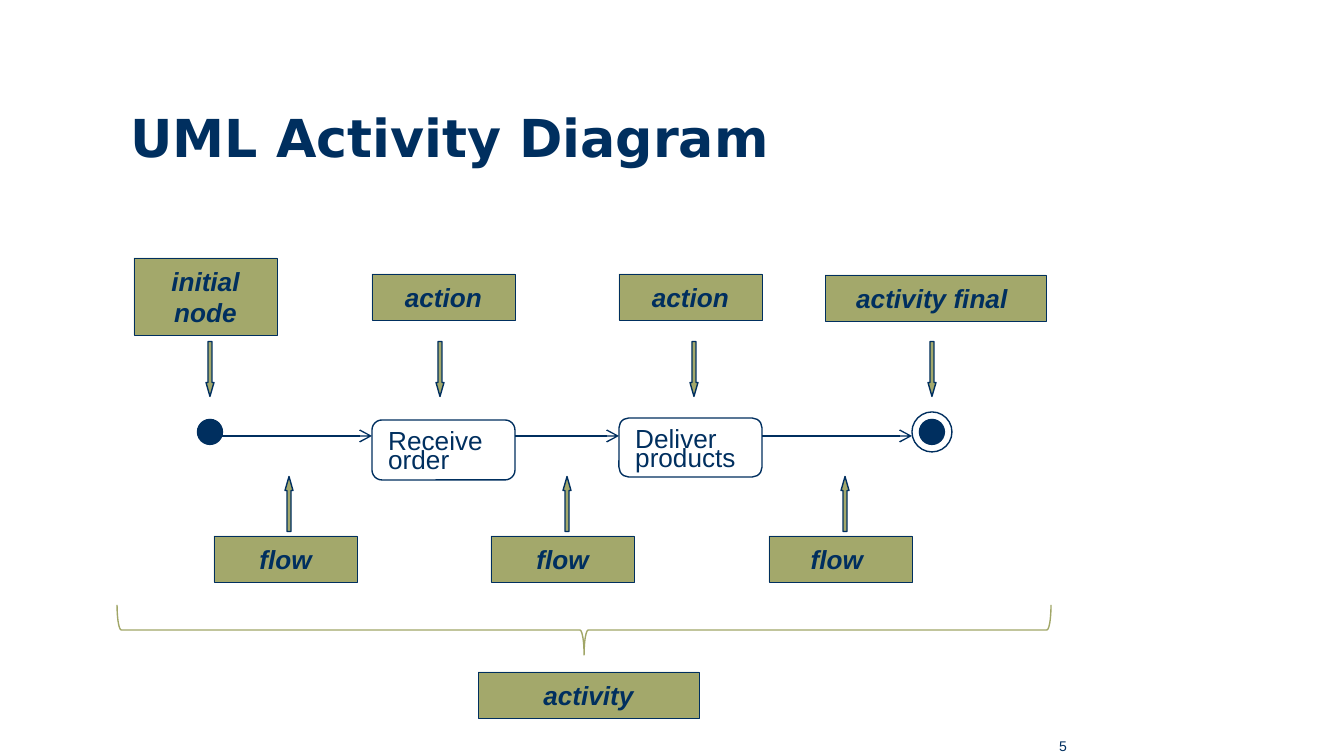
import pptx
import pptx.util
import pptx.dml.color
import pptx.enum.shapes
import pptx.enum.text
import pptx.oxml.ns
import lxml.etree

RGB = pptx.dml.color.RGBColor
NAVY = RGB(0x00, 0x2F, 0x5F)
OLIVE = RGB(0xA3, 0xA8, 0x6B)
MOSS = RGB(0xA1, 0xA6, 0x67)
WHITE = RGB(0xFF, 0xFF, 0xFF)
KIND = pptx.enum.shapes.MSO_SHAPE
ALIGN = pptx.enum.text.PP_ALIGN
ANCHOR = pptx.enum.text.MSO_ANCHOR
SCALE = 914400 / 134.4

# Content: boxes are left, top, width, height in px
TITLE = ("UML Activity Diagram", (117, 93, 1007, 87))
NUMBER = ("5", (1046, 731, 80, 24))
LABELS = [
    ("initial node", (134, 258, 143, 77)),
    ("action", (372, 274, 143, 46)),
    ("action", (619, 274, 143, 46)),
    ("activity final ", (825, 275, 221, 46)),
    ("flow", (214, 536, 143, 46)),
    ("flow", (491, 536, 143, 46)),
    ("flow ", (769, 536, 143, 46)),
    ("activity", (478, 672, 221, 46)),
]
ACTIONS = [
    ("Receive order", (372, 420, 143, 60), (375, 429, 153, 51)),
    ("Deliver products", (619, 418, 143, 59), (622, 427, 164, 52)),
]
START = (210, 432)
FINAL = (932, 432)
DOT, RING = 25, 40
FLOW_Y = 436
FLOWS = [(222, 372), (515, 619), (762, 912)]
# Pointers: rotation, middle y, middle of each x
POINTERS = [
    (270, 369, (210, 440, 694, 932)),
    (90, 504, (289, 567, 845)),
]
BRACE = (584, 630, 50, 934)


def px(n):
    return round(n * SCALE)


def place(box):
    return [px(n) for n in box]


def around(x, y, w, h):
    """Give the box of size w by h whose middle is x, y."""
    return (x - w / 2, y - h / 2, w, h)


def shape(home, kind, box, fill=None, line=NAVY, width=0.75, turn=0):
    item = home.add_shape(kind, *place(box))
    item.shadow.inherit = False
    if fill is None:
        item.fill.background()
    else:
        item.fill.solid()
        item.fill.fore_color.rgb = fill
    item.line.color.rgb = line
    item.line.width = pptx.util.Pt(width)
    item.rotation = turn
    return item


def write(item, text, size=14, face="Arial", bold=False, slant=False,
          align=ALIGN.LEFT, anchor=ANCHOR.TOP, lead=None):
    frame = item.text_frame
    frame.word_wrap = True
    frame.auto_size = pptx.enum.text.MSO_AUTO_SIZE.NONE
    frame.vertical_anchor = anchor
    para = frame.paragraphs[0]
    para.alignment = align
    para.line_spacing = lead
    run = para.add_run()
    run.text = text
    font = run.font
    font.name, font.size = face, pptx.util.Pt(size)
    font.bold, font.italic = bold, slant
    font.color.rgb = NAVY


def arrow(home, left, right, y):
    line = home.add_connector(pptx.enum.shapes.MSO_CONNECTOR.STRAIGHT,
                              *place((left, y, right, y)))
    line.line.color.rgb = NAVY
    line.line.width = pptx.util.Pt(0.75)
    qn = pptx.oxml.ns.qn
    tail = lxml.etree.SubElement(line.line._get_or_add_ln(), qn("a:tailEnd"))
    tail.set("type", "arrow")
    lxml.etree.SubElement(line._element.spPr, qn("a:effectLst"))


def main():
    deck = pptx.Presentation()
    deck.slide_width, deck.slide_height = px(1344), px(756)
    slide = deck.slides.add_slide(deck.slide_layouts[5])
    shapes = slide.shapes

    text, box = TITLE
    title = shapes.title
    title.left, title.top, title.width, title.height = place(box)
    write(title, text, size=28, face="DejaVu Sans", bold=True,
          anchor=ANCHOR.MIDDLE)

    text, box = NUMBER
    write(shapes.add_textbox(*place(box)), text, size=7.5)

    shape(shapes, KIND.OVAL, around(*START, DOT, DOT), fill=NAVY)
    final = shapes.add_group_shape().shapes
    shape(final, KIND.OVAL, around(*FINAL, DOT, DOT), fill=NAVY)
    shape(final, KIND.OVAL, around(*FINAL, RING, RING))

    for text, box, area in ACTIONS:
        shape(shapes, KIND.ROUNDED_RECTANGLE, box, fill=WHITE)
        write(shapes.add_textbox(*place(area)), text, lead=0.6)

    for left, right in FLOWS:
        arrow(shapes, left, right, FLOW_Y)

    for text, box in LABELS:
        label = shape(shapes, KIND.RECTANGLE, box, fill=OLIVE, width=0.25)
        write(label, text, bold=True, slant=True, align=ALIGN.CENTER,
              anchor=ANCHOR.MIDDLE)

    for turn, y, row in POINTERS:
        for x in row:
            mark = shape(shapes, KIND.LEFT_ARROW, around(x, y, 55, 8),
                         fill=OLIVE, turn=turn)
            mark.adjustments[1] = 1.76

    shape(shapes, KIND.RIGHT_BRACE, around(*BRACE), line=MOSS, turn=90)
    deck.save("out.pptx")


if __name__ == "__main__":
    main()
